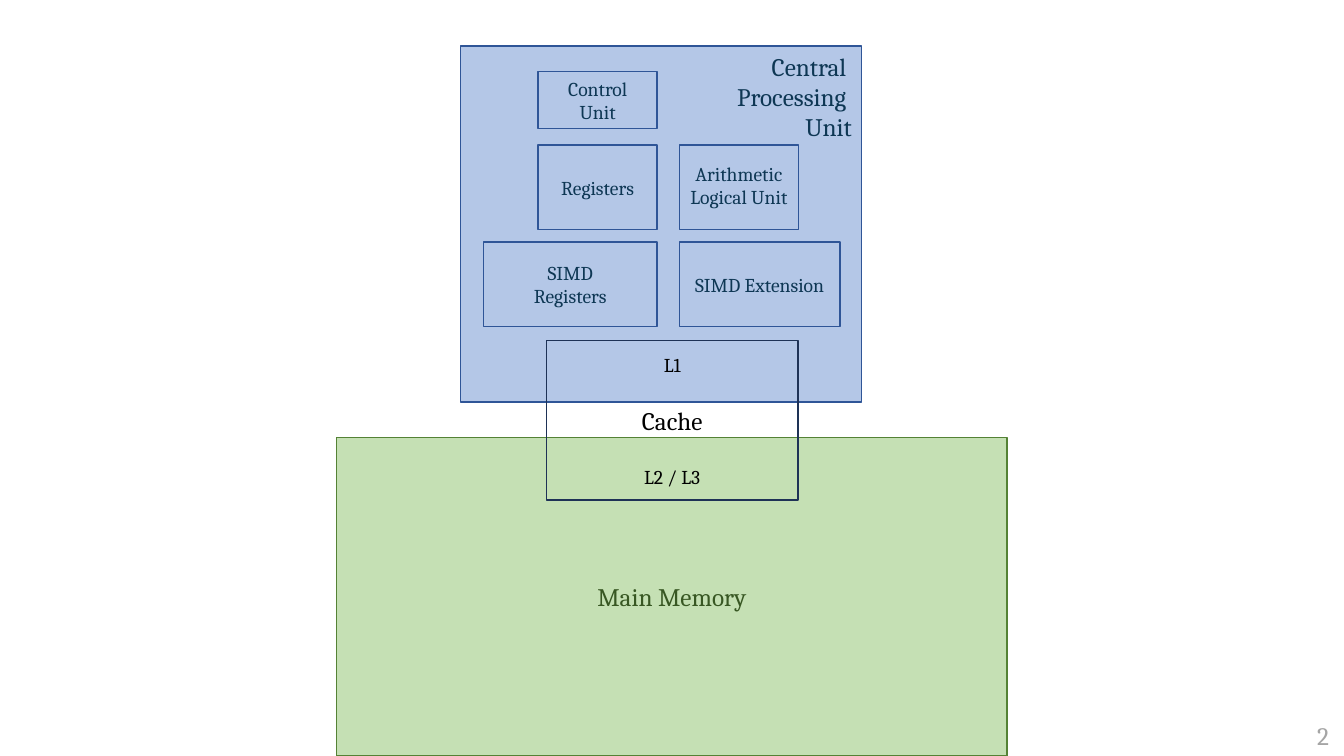
from pptx import Presentation
from pptx.dml.color import RGBColor
from pptx.enum import shapes, text
from pptx.util import Pt

FONT = "Cambria"
BLUE = RGBColor(0xB4, 0xC7, 0xE7)
EDGE = RGBColor(0x2F, 0x55, 0x97)
INK = RGBColor(0x0E, 0x37, 0x54)
GREEN = RGBColor(0xC5, 0xE0, 0xB4)
MOSS = RGBColor(0x54, 0x82, 0x35)
PINE = RGBColor(0x38, 0x57, 0x23)
NAVY = RGBColor(0x1E, 0x32, 0x56)
BLACK = RGBColor(0, 0, 0)
GREY = RGBColor(0xA5, 0xA5, 0xA5)

LEFT_END = 469.4
RIGHT_START = 485.3
UNIT_W = 85
UNIT_H = 60.5
ROW_ONE = 103.7
ROW_TWO = 172.8


def write(frame, lines, size, color, align):
    frame.text = "\n".join(lines)
    for para in frame.paragraphs:
        para.alignment = align
        para.font.name = FONT
        para.font.size = Pt(size)
        para.font.color.rgb = color


def box(slide, area, lines, size=14, color=INK, fill=BLUE, line=EDGE,
        align=text.PP_ALIGN.CENTER, anchor=text.MSO_ANCHOR.MIDDLE):
    shape = slide.shapes.add_shape(
        shapes.MSO_SHAPE.RECTANGLE, *[Pt(n) for n in area])
    shape.shadow.inherit = False
    if fill is None:
        shape.fill.background()
    else:
        shape.fill.solid()
        shape.fill.fore_color.rgb = fill
    shape.line.color.rgb = line
    shape.line.width = Pt(1)
    frame = shape.text_frame
    frame.word_wrap = True
    frame.vertical_anchor = anchor
    write(frame, lines, size, color, align)
    return frame


def left(slide, top, width, height, lines):
    box(slide, (LEFT_END - width, top, width, height), lines)


def right(slide, top, width, lines):
    return box(slide, (RIGHT_START, top, width, UNIT_H), lines)


def cache(slide):
    frame = box(slide, (390.2, 243.4, 180, 113.8), ["L1", "Cache", "L2 / L3"],
                color=BLACK, fill=None, line=NAVY)
    title, lower = frame.paragraphs[1:]
    title.font.size = Pt(18)
    for para in (title, lower):
        para.space_before = Pt(21)


def number(slide):
    label = slide.shapes.add_textbox(Pt(933.8), Pt(511.2), Pt(26), Pt(28.8))
    write(label.text_frame, ["2"], 18, GREY, text.PP_ALIGN.LEFT)


def main():
    deck = Presentation()
    deck.slide_width, deck.slide_height = Pt(960), Pt(540)
    slide = deck.slides.add_slide(deck.slide_layouts[6])

    box(slide, (329, 33, 286.6, 254.2), ["Central ", "Processing ", "Unit"],
        size=18, align=text.PP_ALIGN.RIGHT, anchor=text.MSO_ANCHOR.TOP)
    left(slide, 51, UNIT_W, 41, ["Control Unit"])
    left(slide, ROW_ONE, UNIT_W, UNIT_H, ["Registers"])
    box(slide, (240.5, 312.5, 478.8, 227.5), ["Main Memory"],
        size=18, color=PINE, fill=GREEN, line=MOSS)
    logic = right(slide, ROW_ONE, UNIT_W, ["Arithmetic Logical Unit"])
    logic.margin_left = logic.margin_right = logic.margin_top = 0
    cache(slide)
    left(slide, ROW_TWO, 124, UNIT_H, ["SIMD", "Registers"])
    right(slide, ROW_TWO, 114.8, ["SIMD Extension"])
    number(slide)

    deck.save("out.pptx")


if __name__ == "__main__":
    main()
